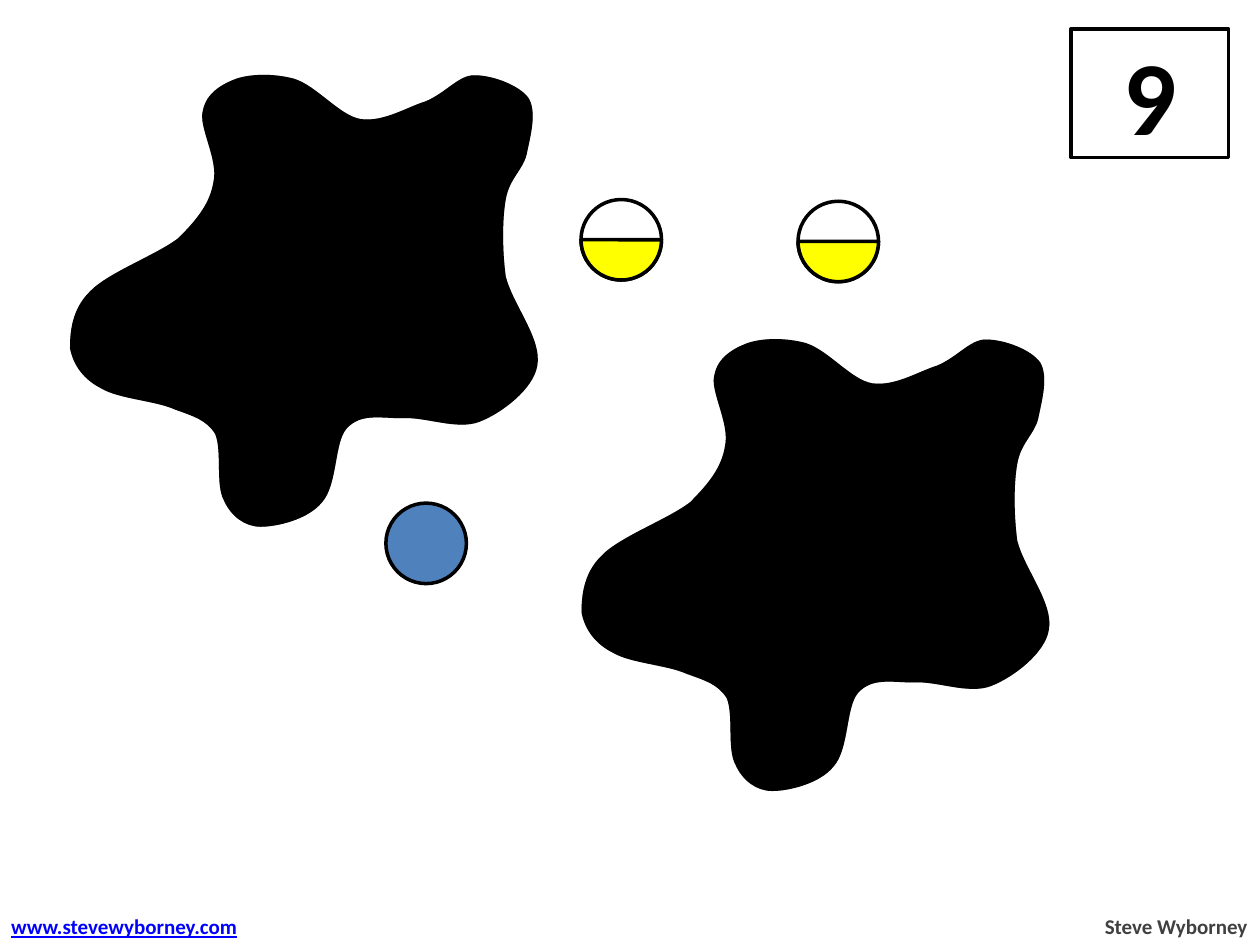
from lxml.etree import SubElement
from pptx import Presentation
from pptx.dml.color import RGBColor
from pptx.enum.shapes import MSO_SHAPE
from pptx.enum.text import MSO_ANCHOR, MSO_AUTO_SIZE, PP_ALIGN
from pptx.oxml.ns import qn
from pptx.util import Pt

COLORS = {"black": "000000", "white": "FFFFFF", "blue": "4F81BD",
          "yellow": "FFFF00", "gray": "404040", "link": "0000FF"}
FONT = "Calibri"
DOT_SIZE = 46
HALF_TURN = 108.08  # 180 degrees, in the units of the pie adjustments

WHOLE_DOTS = [(135.5, 58.5), (220.5, 287.5), (174, 142), (456, 291)]
HALF_DOTS = [(538, 335.5), (337, 323), (423.5, 205), (536.5, 214), (424, 394.5),
             (50.5, 169), (135.5, 238.5), (252, 175.5), (332, 114), (456, 115)]

SPLAT_OFFSETS = [(0, 0), (292.3, 151)]
SPLAT_OPACITIES = [100, 40]
SPLAT_START = (58, 222)
# Each row is one Bezier curve: two control points and the end point.
SPLAT_CURVES = [
    [(48, 217), (42, 209), (40, 199)],
    [(40, 190), (41, 177), (51, 167)],
    [(61, 156), (89, 146), (102, 136)],
    [(113, 125), (120, 116), (122, 104)],
    [(125, 91), (113, 72), (116, 63)],
    [(118, 53), (127, 48), (135, 45)],
    [(144, 42), (157, 42), (168, 45)],
    [(181, 49), (194, 66), (206, 68)],
    [(219, 70), (233, 61), (243, 58)],
    [(255, 53), (262, 43), (271, 43)],
    [(282, 43), (297, 49), (302, 56)],
    [(307, 64), (303, 78), (301, 88)],
    [(299, 97), (291, 102), (289, 114)],
    [(287, 125), (287, 143), (289, 158)],
    [(293, 174), (310, 194), (307, 209)],
    [(305, 222), (287, 236), (274, 241)],
    [(261, 246), (243, 238), (230, 239)],
    [(217, 239), (206, 236), (198, 245)],
    [(191, 253), (193, 277), (184, 287)],
    [(176, 297), (158, 301), (149, 301)],
    [(140, 301), (132, 295), (128, 286)],
    [(123, 277), (127, 258), (123, 248)],
    [(118, 240), (111, 238), (100, 234)],
    [(89, 229), (68, 228), SPLAT_START],
]


def color(name):
    return RGBColor.from_string(COLORS[name])


def paint(shape, fill, line=None):
    shape.shadow.inherit = False
    shape.fill.solid()
    shape.fill.fore_color.rgb = color(fill)
    if line:
        shape.line.color.rgb = color(line)
        shape.line.width = Pt(2)
    else:
        shape.line.fill.background()


def add_preset(shapes, kind, left, top, width, height, fill):
    shape = shapes.add_shape(kind, Pt(left), Pt(top), Pt(width), Pt(height))
    paint(shape, fill, "black")
    return shape


def write(frame, text, text_color, alignment, **font_format):
    paragraph = frame.paragraphs[0]
    paragraph.alignment = alignment
    run = paragraph.add_run()
    run.text = text
    run.font.color.rgb = color(text_color)
    for name, value in {"name": FONT, "bold": True, **font_format}.items():
        setattr(run.font, name, value)


def add_number_box(slide, number):
    box = add_preset(slide.shapes, MSO_SHAPE.RECTANGLE, 612, 16.5, 90, 73.5, "white")
    box.text_frame.vertical_anchor = MSO_ANCHOR.MIDDLE
    write(box.text_frame, number, "black", PP_ALIGN.CENTER, size=Pt(60))


def add_dot(shapes, left, top, fill):
    add_preset(shapes, MSO_SHAPE.OVAL, left, top, DOT_SIZE, DOT_SIZE, fill)


def add_half_dot(slide, left, top):
    group = slide.shapes.add_group_shape()
    add_dot(group.shapes, left, top, "white")
    half = add_preset(group.shapes, MSO_SHAPE.PIE, left, top, DOT_SIZE, DOT_SIZE, "yellow")
    half.adjustments[0] = 0
    half.adjustments[1] = HALF_TURN


def curve_segments(shape):
    """Turn every three line segments of the outline into one Bezier curve."""
    lines = list(shape.element.iter(qn("a:lnTo")))
    for index in range(0, len(lines), 3):
        curve, *others = lines[index:index + 3]
        curve.tag = qn("a:cubicBezTo")
        for line in others:
            curve.append(line[0])
            line.getparent().remove(line)


def add_splat(slide, offset, opacity):
    builder = slide.shapes.build_freeform(*SPLAT_START, scale=Pt(1))
    builder.add_line_segments([point for curve in SPLAT_CURVES for point in curve])
    splat = builder.convert_to_shape(*map(Pt, offset))
    curve_segments(splat)
    paint(splat, "black")
    if opacity < 100:
        fill_color = splat.element.spPr.find(qn("a:solidFill"))[0]
        SubElement(fill_color, qn("a:alpha"), val=str(opacity * 1000))


def add_footer(slide, text, left, width, text_color, alignment, underline=False):
    box = slide.shapes.add_textbox(Pt(left), Pt(518.4), Pt(width), Pt(21.6))
    box.text_frame.word_wrap = False
    box.text_frame.auto_size = MSO_AUTO_SIZE.SHAPE_TO_FIT_TEXT
    write(box.text_frame, text, text_color, alignment, size=Pt(12), underline=underline)


def main():
    presentation = Presentation()
    presentation.slide_width, presentation.slide_height = Pt(720), Pt(540)
    slide = presentation.slides.add_slide(presentation.slide_layouts[6])

    add_number_box(slide, "9")
    for left, top in WHOLE_DOTS:
        add_dot(slide.shapes, left, top, "blue")
    for left, top in HALF_DOTS:
        add_half_dot(slide, left, top)
    add_footer(slide, "Steve Wyborney", 623.5, 96.5, "gray", PP_ALIGN.RIGHT)
    add_footer(slide, "www.stevewyborney.com", -0.7, 143.5, "link", PP_ALIGN.LEFT, True)
    for offset in SPLAT_OFFSETS:
        for opacity in SPLAT_OPACITIES:
            add_splat(slide, offset, opacity)

    presentation.save("out.pptx")


if __name__ == "__main__":
    main()
